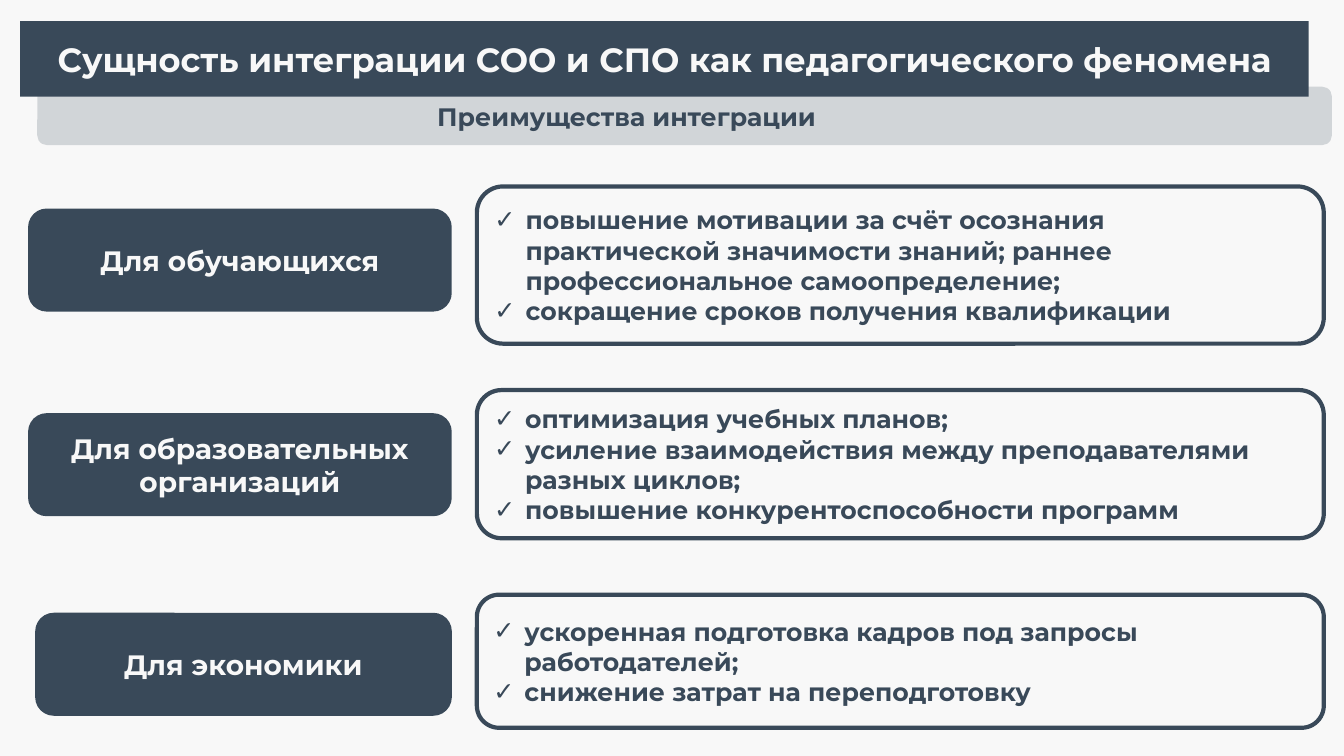
from dataclasses import dataclass

from lxml.etree import SubElement
from pptx import Presentation
from pptx.dml.color import RGBColor
from pptx.enum.shapes import MSO_SHAPE as Preset
from pptx.enum.text import MSO_ANCHOR as Anchor, MSO_AUTO_SIZE as AutoSize, PP_ALIGN as Align
from pptx.oxml.ns import qn
from pptx.shapes.autoshape import Shape
from pptx.slide import Slide
from pptx.util import Inches, Pt

FONT = "Montserrat"
DARK = "394959"
LIGHT = "F8F8F8"
INDENT = Inches(0.31)

Box = tuple[float, float, float, float]


@dataclass(frozen=True)
class Benefit:
    audience: str
    label_box: Box
    list_box: Box
    points: tuple[str, ...]


BENEFITS = (
    Benefit("Для обучающихся", (0.3, 2.09, 4.16, 0.98), (4.73, 1.85, 8.4, 1.56), (
        "повышение мотивации за счёт осознания практической значимости знаний; "
        "раннее профессиональное самоопределение;",
        "сокращение сроков получения квалификации",
    )),
    Benefit("Для образовательных организаций", (0.3, 4.12, 4.16, 0.98), (4.73, 3.87, 8.4, 1.47), (
        "оптимизация учебных планов;",
        "усиление взаимодействия между преподавателями разных циклов;",
        "повышение конкурентоспособности программ",
    )),
    Benefit("Для экономики", (0.37, 6.1, 4.09, 0.98), (4.73, 5.9, 8.4, 1.32), (
        "ускоренная подготовка кадров под запросы работодателей;",
        "снижение затрат на переподготовку",
    )),
)


def color(value: str) -> RGBColor:
    return RGBColor.from_string(value)


def place(shape: Shape, box: Box) -> None:
    shape.left, shape.top, shape.width, shape.height = map(Inches, box)


def fill_solid(shape: Shape, value: str) -> None:
    shape.fill.solid()
    shape.fill.fore_color.rgb = color(value)


def add_rounded(slide: Slide, box: Box, fill: str | None, outlined: bool) -> Shape:
    shape = slide.shapes.add_shape(Preset.ROUNDED_RECTANGLE, *map(Inches, box))
    shape.shadow.inherit = False
    if fill:
        fill_solid(shape, fill)
    else:
        shape.fill.background()
    if outlined:
        shape.line.color.rgb = color(DARK)
        shape.line.width = Pt(3)
    else:
        shape.line.fill.background()
    return shape


def add_check_bullet(paragraph) -> None:
    properties = paragraph._p.get_or_add_pPr()
    properties.set("marL", str(INDENT))
    properties.set("indent", str(-INDENT))
    SubElement(properties, qn("a:buFont"), typeface="Arial")
    SubElement(properties, qn("a:buChar"), char="✓")


def write(shape: Shape, lines: tuple[str, ...], size: int, value: str,
          align: Align = Align.CENTER, checked: bool = False) -> None:
    frame = shape.text_frame
    frame.word_wrap = True
    frame.vertical_anchor = Anchor.MIDDLE
    for index, line in enumerate(lines):
        paragraph = frame.add_paragraph() if index else frame.paragraphs[0]
        paragraph.alignment = align
        if checked:
            add_check_bullet(paragraph)
        run = paragraph.add_run()
        run.text = line
        run.font.name = FONT
        run.font.size = Pt(size)
        run.font.bold = True
        run.font.color.rgb = color(value)


def add_subtitle(slide: Slide) -> None:
    """Draw the translucent band with its caption, behind the title."""
    band = add_rounded(slide, (0.37, 0.86, 12.84, 0.58), DARK, outlined=False)
    rgb = band.element.spPr.find(f"{qn('a:solidFill')}/{qn('a:srgbClr')}")
    SubElement(rgb, qn("a:alpha"), val="20000")
    caption = slide.shapes.add_textbox(*map(Inches, (1.13, 0.96, 10.17, 0.4)))
    write(caption, ("Преимущества интеграции",), 18, DARK)
    for shape in (band, caption):
        slide.shapes.title.element.addprevious(shape.element)


def format_title(slide: Slide) -> None:
    title = slide.shapes.title
    place(title, (0.2, 0.21, 12.78, 0.75))
    geometry = SubElement(title.element.spPr, qn("a:prstGeom"), prst="roundRect")
    SubElement(geometry, qn("a:avLst"))
    fill_solid(title, DARK)
    title.text_frame.auto_size = AutoSize.NONE
    write(title, ("Сущность интеграции СОО и СПО как педагогического феномена",), 24, LIGHT)


def add_benefit(slide: Slide, benefit: Benefit) -> None:
    label = add_rounded(slide, benefit.label_box, DARK, outlined=True)
    write(label, (benefit.audience,), 20, LIGHT)
    points = add_rounded(slide, benefit.list_box, None, outlined=True)
    write(points, benefit.points, 18, DARK, Align.LEFT, checked=True)


def main() -> None:
    presentation = Presentation()
    presentation.slide_width = Inches(13.33)
    presentation.slide_height = Inches(7.5)
    slide = presentation.slides.add_slide(presentation.slide_layouts[5])
    slide.background.fill.solid()
    slide.background.fill.fore_color.rgb = color(LIGHT)
    format_title(slide)
    add_subtitle(slide)
    for benefit in BENEFITS:
        add_benefit(slide, benefit)
    presentation.save("out.pptx")


if __name__ == "__main__":
    main()
